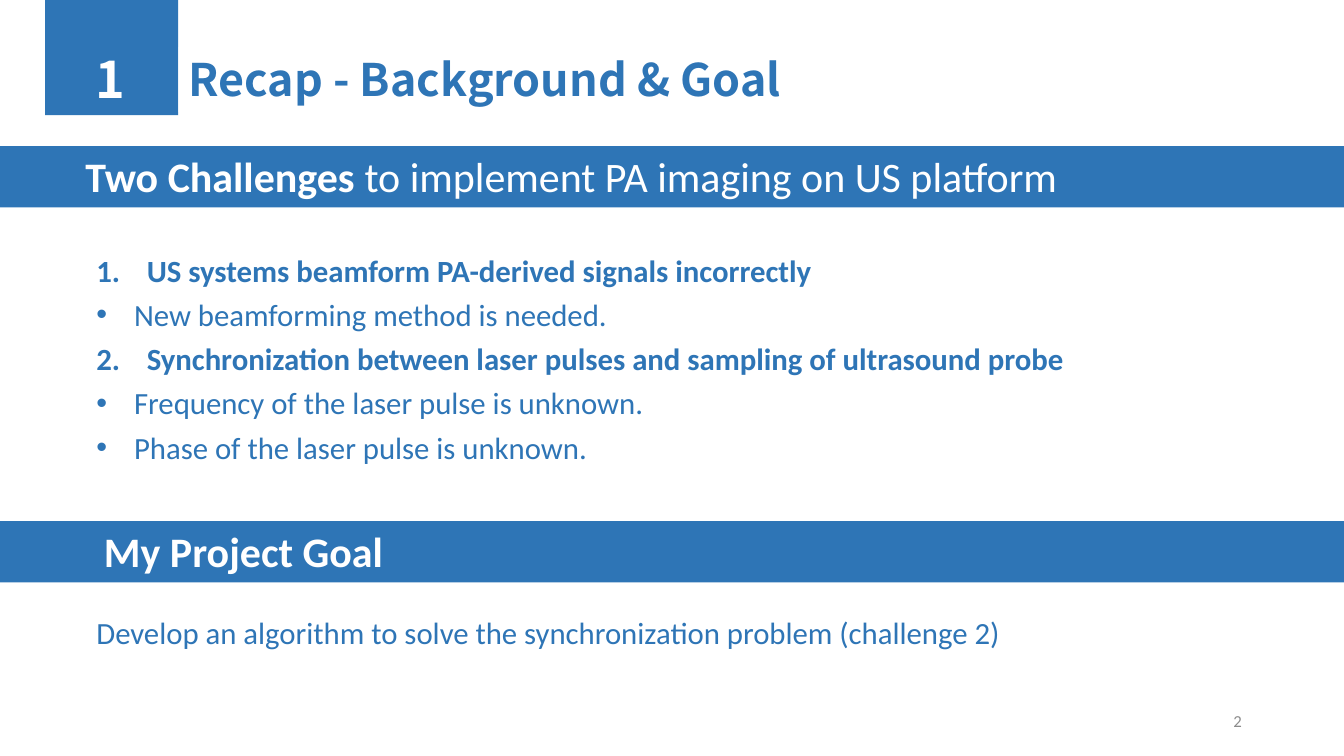
from dataclasses import dataclass

from lxml import etree
from pptx import Presentation
from pptx.dml.color import RGBColor
from pptx.enum import shapes, text
from pptx.oxml import ns
from pptx.util import Cm, Pt


@dataclass(frozen=True)
class Theme:
    blue: RGBColor = RGBColor(0x2E, 0x75, 0xB6)
    white: RGBColor = RGBColor(0xFF, 0xFF, 0xFF)
    gray: RGBColor = RGBColor(0x8C, 0x8C, 0x8C)
    head: str = "Noto Sans CJK SC"
    body: str = "Calibri"
    digit: int = 36
    title: int = 32
    band: int = 30
    copy: int = 22
    page: int = 12


T = Theme()
WIDE = 33.87
INSET = 0.25
BODY_X, BODY_W = 2.18, 27.15


def add_run(para, words, size, color, font=T.body, bold=False):
    run = para.add_run()
    run.text = words
    run.font.size = Pt(size)
    run.font.name = font
    run.font.bold = bold
    run.font.color.rgb = color


def set_frame(shape, left=INSET, wrap=True):
    """Prepare a top-anchored text frame and return its first paragraph."""
    frame = shape.text_frame
    frame.word_wrap = wrap
    frame.vertical_anchor = text.MSO_ANCHOR.TOP
    frame.margin_left = Cm(left)
    para = frame.paragraphs[0]
    para.alignment = text.PP_ALIGN.LEFT
    return para


def add_rect(slide, x, y, w, h, fill):
    rect = slide.shapes.add_shape(
        shapes.MSO_SHAPE.RECTANGLE, Cm(x), Cm(y), Cm(w), Cm(h))
    rect.shadow.inherit = False
    rect.fill.solid()
    rect.fill.fore_color.rgb = fill
    rect.line.fill.background()
    return rect


def add_box(slide, x, y, w, h):
    return slide.shapes.add_textbox(Cm(x), Cm(y), Cm(w), Cm(h))


def add_band(slide, y, left, runs):
    """Draw a full-width band; runs are (words, bold) pairs."""
    para = set_frame(add_rect(slide, 0, y, WIDE, 1.55, T.blue), left)
    for words, bold in runs:
        add_run(para, words, T.band, T.white, bold=bold)


def set_mark(para, num):
    """Number the paragraph from num, or give it a dot if num is None."""
    props = para._p.get_or_add_pPr()
    hang = Cm(0.95 if num is None else 1.27)
    props.set("marL", str(hang))
    props.set("indent", str(-hang))
    if num is None:
        etree.SubElement(props, ns.qn("a:buFont"), typeface="Arial")
        etree.SubElement(props, ns.qn("a:buChar"), char="•")
    else:
        etree.SubElement(props, ns.qn("a:buFont"), typeface="+mj-lt")
        etree.SubElement(props, ns.qn("a:buAutoNum"),
                         type="arabicPeriod", startAt=str(num))


def add_list(slide, y, h, groups):
    """Write numbered bold heads, each followed by its dotted points."""
    box = add_box(slide, BODY_X, y, BODY_W, h)
    para = set_frame(box)
    for num, (head, points) in enumerate(groups, 1):
        lines = [(head, num)] + [(point, None) for point in points]
        for words, mark in lines:
            if para.runs:
                para = box.text_frame.add_paragraph()
            para.line_spacing = 1.2
            set_mark(para, mark)
            add_run(para, words, T.copy, T.blue, bold=mark is not None)


def add_title(slide, digit, words):
    add_rect(slide, 1.14, 0, 3.35, 2.9, T.blue)
    para = set_frame(add_rect(slide, 2.16, 1.09, 1.3, 1.8, T.blue), wrap=False)
    add_run(para, digit, T.digit, T.white, T.head, True)
    para = set_frame(add_rect(slide, 4.5, 1.19, 28.7, 1.63, T.white))
    add_run(para, words, T.title, T.blue, T.head, True)


def add_note(slide, y, words):
    para = set_frame(add_box(slide, BODY_X, y, BODY_W, 1.32))
    para.line_spacing = 1.2
    add_run(para, words, T.copy, T.blue)


def add_page(slide, num):
    box = add_box(slide, 23.93, 17.65, 7.62, 1.02)
    para = set_frame(box)
    box.text_frame.vertical_anchor = text.MSO_ANCHOR.MIDDLE
    para.alignment = text.PP_ALIGN.RIGHT
    add_run(para, num, T.page, T.gray)


def main():
    deck = Presentation()
    deck.slide_width, deck.slide_height = Cm(WIDE), Cm(19.05)
    slide = deck.slides.add_slide(deck.slide_layouts[6])
    add_title(slide, "1", "Recap - Background & Goal")
    add_band(slide, 3.68, 2.15, [
        ("Two Challenges ", True),
        ("to implement PA imaging on US platform", False)])
    add_list(slide, 6.02, 5.89, [
        ("US systems beamform PA-derived signals incorrectly",
         ["New beamforming method is needed."]),
        ("Synchronization between laser pulses and sampling of "
         "ultrasound probe",
         ["Frequency of the laser pulse is unknown.",
          "Phase of the laser pulse is unknown."])])
    add_band(slide, 13.13, 2.62, [("My Project Goal", True)])
    add_note(slide, 15.16, "Develop an algorithm to solve the "
             "synchronization problem (challenge 2)")
    add_page(slide, "2")
    deck.save("out.pptx")


if __name__ == "__main__":
    main()
